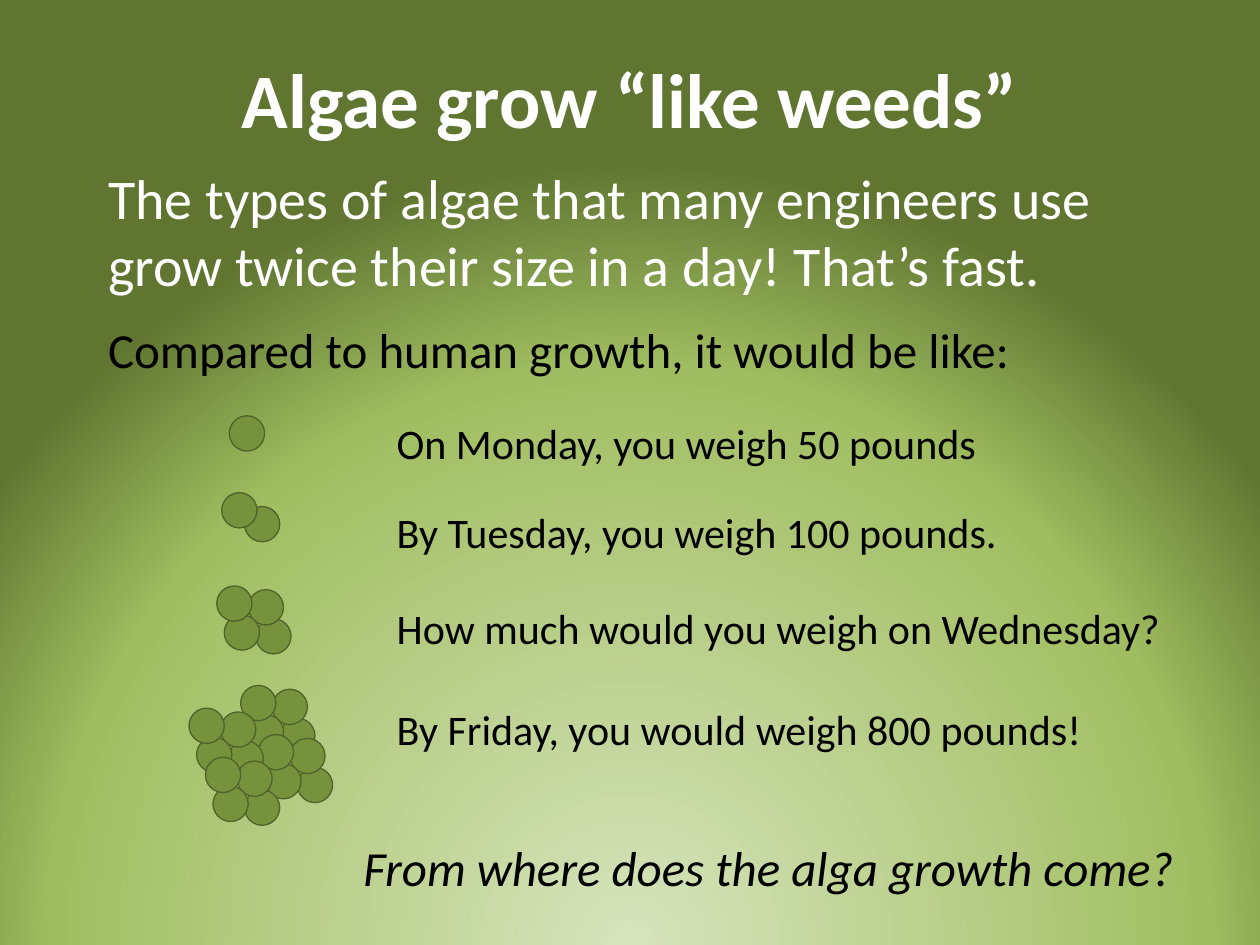
from pptx import Presentation
from pptx.dml.color import RGBColor
from pptx.enum.shapes import MSO_SHAPE as SHAPE
from pptx.enum.text import MSO_ANCHOR as ANCHOR, PP_ALIGN as ALIGN
from pptx.oxml import parse_xml
from pptx.oxml.ns import nsdecls
from pptx.util import Pt

PX = 9144  # 100 px to the inch
CELL = 28
ONE = [(0, 0)]
PAIR = [(18, 11), (0, 0)]
QUAD = [(31, 26), (25, 3), (6, 23), (0, 0)]
QUAD_ORIGINS = [(41, 0), (55, 39), (0, 18), (13, 57)]
COLONY = [(qx + x, qy + y) for qx, qy in QUAD_ORIGINS for x, y in QUAD]

# cells, their left and top; then the line of text and its box
DAYS = [
    (ONE, 182, 330, "On Monday, you weigh 50 pounds", (305, 320, 510, 62), ANCHOR.MIDDLE),
    (PAIR, 176, 391, "By Tuesday, you weigh 100 pounds.", (305, 397, 529, 58), ANCHOR.TOP),
    (QUAD, 172, 465, "How much would you weigh on Wednesday?", (305, 473, 629, 55), ANCHOR.TOP),
    (COLONY, 150, 544, "By Friday, you would weigh 800 pounds!", (305, 550, 623, 56), ANCHOR.MIDDLE),
]


def px(*lengths):
    return [n * PX for n in lengths]


def rgb(color):
    return RGBColor.from_string(color)


def radial_background(s, stops):
    """Fill the slide with a circular gradient centred below its bottom edge."""
    fill = s.background.fill
    fill.solid()
    solid = s._element.xpath("./p:cSld/p:bg/p:bgPr/a:solidFill")[0]
    gs = "".join(f'<a:gs pos="{pos * 1000}"><a:srgbClr val="{color}"/></a:gs>'
                 for pos, color in stops)
    grad = parse_xml(
        f'<a:gradFill {nsdecls("a")} rotWithShape="1"><a:gsLst>{gs}</a:gsLst>'
        '<a:path path="circle">'
        '<a:fillToRect l="50000" t="130000" r="50000" b="-30000"/>'
        '</a:path></a:gradFill>')
    solid.getparent().replace(solid, grad)


def text_box(s, box, anchor=ANCHOR.TOP):
    tf = s.shapes.add_textbox(*px(*box)).text_frame
    tf.word_wrap = True
    tf.vertical_anchor = anchor
    return tf


def write(p, text, size, color="000000", bold=False, italic=False, align=ALIGN.LEFT):
    p.alignment = align
    r = p.add_run()
    r.text = text
    font = r.font
    font.name, font.size = "Calibri", Pt(size)
    font.bold, font.italic = bold, italic
    font.color.rgb = rgb(color)


def title(s, box):
    tf = text_box(s, box, ANCHOR.MIDDLE)
    write(tf.paragraphs[0], "Algae grow “like weeds”", 44, "FFFFFF",
          bold=True, align=ALIGN.CENTER)


def intro(s, box):
    tf = text_box(s, box)
    p = tf.paragraphs[0]
    p.space_after = Pt(12)
    write(p, "The types of algae that many engineers use "
             "grow twice their size in a day! That’s fast.", 32, "FFFFFF")
    write(tf.add_paragraph(), "Compared to human growth, it would be like:", 28)


def algae(s, left, top, cells):
    """Draw a cluster of round cells, grouped when there are several."""
    shapes = s.shapes if len(cells) == 1 else s.shapes.add_group_shape().shapes
    for x, y in cells:
        sp = shapes.add_shape(SHAPE.OVAL, *px(left + x, top + y, CELL, CELL))
        sp.shadow.inherit = False
        sp.fill.solid()
        sp.fill.fore_color.rgb = rgb("76923C")
        sp.line.color.rgb = rgb("4F6228")
        sp.line.width = Pt(0.75)


def day(s, cells, left, top, text, box, anchor):
    algae(s, left, top, cells)
    write(text_box(s, box, anchor).paragraphs[0], text, 24)


def question(s, box):
    write(text_box(s, box).paragraphs[0], "From where does the alga growth come?",
          28, italic=True, align=ALIGN.RIGHT)


def main():
    prs = Presentation()
    prs.slide_width, prs.slide_height = px(1000, 750)
    s = prs.slides.add_slide(prs.slide_layouts[6])
    radial_background(s, [(0, "D7E4BD"), (73, "A0BE61"), (100, "5F7530")])
    title(s, (50, 15, 900, 125))
    intro(s, (76, 125, 829, 135))
    for row in DAYS:
        day(s, *row)
    question(s, (197, 660, 744, 57))
    prs.save("out.pptx")


if __name__ == "__main__":
    main()
